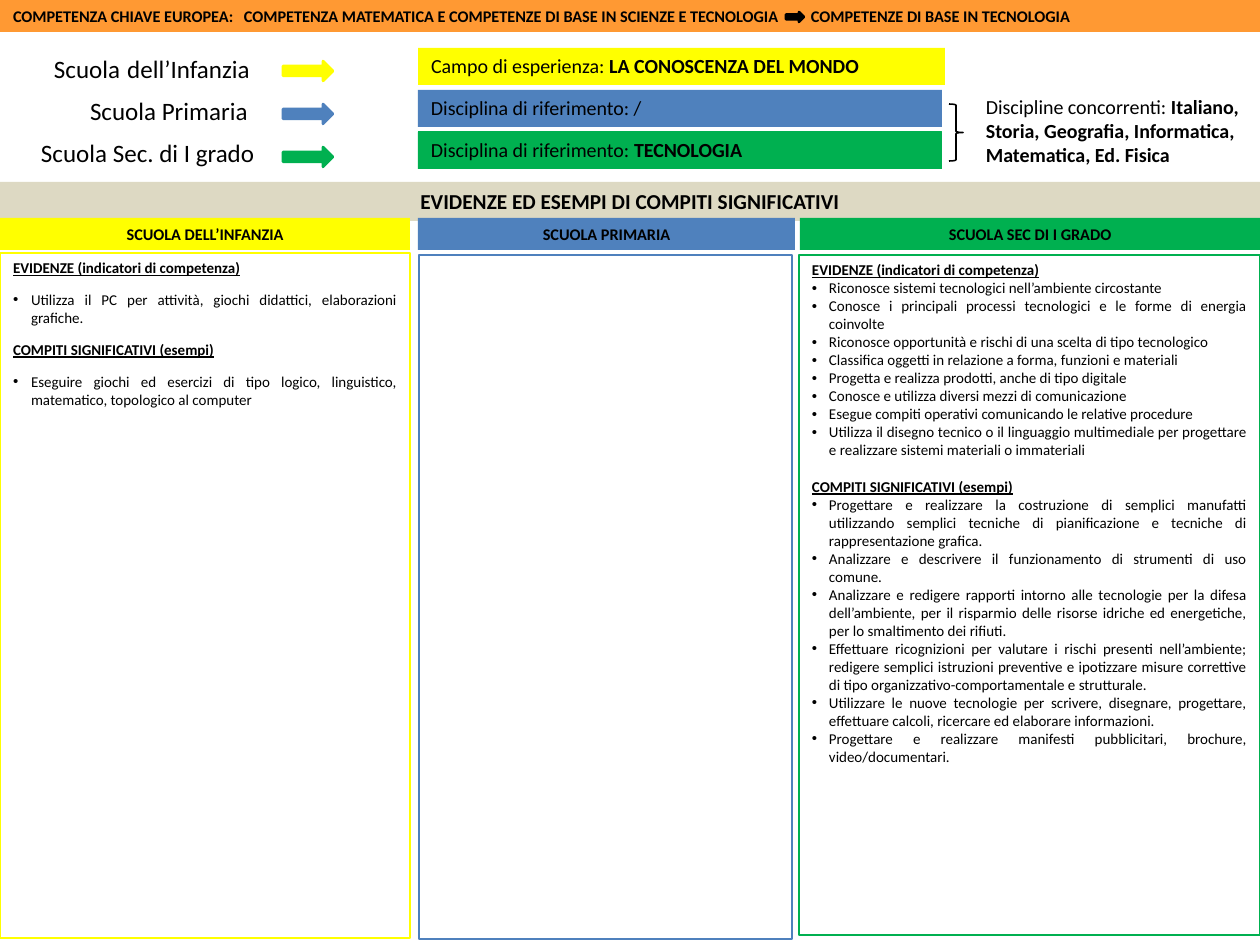
from lxml import etree
from pptx import Presentation
from pptx.dml.color import RGBColor
from pptx.enum.shapes import MSO_SHAPE
from pptx.enum.text import MSO_ANCHOR, PP_ALIGN
from pptx.oxml.ns import qn
from pptx.util import Emu, Pt

RECT, ARROW, BRACE = MSO_SHAPE.RECTANGLE, MSO_SHAPE.RIGHT_ARROW, MSO_SHAPE.RIGHT_BRACE
LEFT, CENTER, JUSTIFY = PP_ALIGN.LEFT, PP_ALIGN.CENTER, PP_ALIGN.JUSTIFY
TOP = MSO_ANCHOR.TOP
FONT = "Calibri"
PX = 914400 // 90
BLACK = RGBColor(0, 0, 0)
ORANGE = RGBColor(0xFF, 0x99, 0x33)
YELLOW = RGBColor(0xFF, 0xFF, 0x00)
BLUE = RGBColor(0x4F, 0x81, 0xBD)
GREEN = RGBColor(0x00, 0xB0, 0x50)
SAND = RGBColor(0xDD, 0xD9, 0xC3)

TITLE = ("COMPETENZA CHIAVE EUROPEA:\tCOMPETENZA MATEMATICA E COMPETENZE DI BASE "
         "IN SCIENZE E TECNOLOGIA\tCOMPETENZE DI BASE IN TECNOLOGIA")
TITLE_TABS = (231, 798)
BAND = "EVIDENZE ED ESEMPI DI COMPITI SIGNIFICATIVI"

# Runs are (text, size, bold)
SCHOOLS = [
    dict(color=YELLOW, label_box=(41, 41, 278, 50), arrow_y=61, box=(418, 48, 527, 37), outline=0,
         label=[("Scuola", 20, False), (" ", 25, False), ("dell’Infanzia", 20, False)],
         subject=[("Campo di esperienza: ", 16, False), ("LA CONOSCENZA DEL MONDO", 16, True)]),
    dict(color=BLUE, label_box=(77, 90, 192, 43), arrow_y=104, box=(418, 90, 524, 37), outline=0.75,
         label=[("Scuola Primaria", 20, False)],
         subject=[("Disciplina di riferimento: /", 16, False)]),
    dict(color=GREEN, label_box=(28, 132, 292, 43), arrow_y=147, box=(418, 132, 524, 37), outline=0.75,
         label=[("Scuola Sec. di I grado", 20, False)],
         subject=[("Disciplina di riferimento: ", 16, False), ("TECNOLOGIA", 16, True)]),
]
RELATED = [("Discipline concorrenti: ", 16, False),
           ("Italiano, Storia, Geografia, Informatica, Matematica, Ed. Fisica", 16, True)]

EVIDENCE, TASKS = "EVIDENZE (indicatori di competenza)", "COMPITI SIGNIFICATIVI (esempi)"
# gap: points before each further heading; bullet_gap: points before the first bullet below a heading
COLUMNS = [
    dict(title="SCUOLA DELL’INFANZIA", color=YELLOW, header=(0, 410), body=(0, 253, 410, 685),
         gap=11, bullet_gap=11, indent=18, sections=[
        (EVIDENCE, ["Utilizza il PC per attività, giochi didattici, elaborazioni grafiche."]),
        (TASKS, ["Eseguire giochi ed esercizi di tipo logico, linguistico, matematico, "
                 "topologico al computer"])]),
    dict(title="SCUOLA PRIMARIA", color=BLUE, header=(418, 377), body=(419, 255, 373, 684),
         gap=0, bullet_gap=0, indent=0, sections=[]),
    dict(title="SCUOLA SEC DI I GRADO", color=GREEN, header=(800, 460), body=(799, 255, 461, 680),
         gap=14.6, bullet_gap=0, indent=17, sections=[
        (EVIDENCE, [
            "Riconosce sistemi tecnologici nell’ambiente circostante",
            "Conosce i principali processi tecnologici e le forme di energia coinvolte",
            "Riconosce opportunità e rischi di una scelta di tipo tecnologico",
            "Classifica oggetti in relazione a forma, funzioni e materiali",
            "Progetta e realizza prodotti, anche di tipo digitale",
            "Conosce e utilizza diversi mezzi di comunicazione",
            "Esegue compiti operativi comunicando le relative procedure",
            "Utilizza il disegno tecnico o il linguaggio multimediale per progettare e "
            "realizzare sistemi materiali o immateriali"]),
        (TASKS, [
            "Progettare e realizzare la costruzione di semplici manufatti utilizzando semplici "
            "tecniche di pianificazione e tecniche di rappresentazione grafica.",
            "Analizzare e descrivere il funzionamento di strumenti di uso comune.",
            "Analizzare e redigere rapporti intorno alle tecnologie per la difesa dell’ambiente, "
            "per il risparmio delle risorse idriche ed energetiche, per lo smaltimento dei rifiuti.",
            "Effettuare ricognizioni per valutare i rischi presenti nell’ambiente; redigere "
            "semplici istruzioni preventive e ipotizzare misure correttive di tipo "
            "organizzativo-comportamentale e strutturale.",
            "Utilizzare le nuove tecnologie per scrivere, disegnare, progettare, effettuare "
            "calcoli, ricercare ed elaborare informazioni.",
            "Progettare e realizzare manifesti pubblicitari, brochure, video/documentari."])]),
]


def px(*values):
    return [Emu(v * PX) for v in values]


def prepare_frame(sp, inset=(13, 6)):
    tf = sp.text_frame
    tf.word_wrap = True
    tf.vertical_anchor = TOP
    tf.margin_left = tf.margin_right = Emu(inset[0] * PX)
    tf.margin_top = tf.margin_bottom = Emu(inset[1] * PX)
    return tf


def write(p, runs, align=LEFT, underline=False):
    p.alignment = align
    for text, size, bold in runs:
        r = p.add_run()
        r.text = text
        r.font.name, r.font.size, r.font.bold = FONT, Pt(size), bold
        r.font.underline = underline
        r.font.color.rgb = BLACK


def add_bullet(p, indent):
    pPr = p._p.get_or_add_pPr()
    pPr.set("marL", str(indent * PX))
    pPr.set("indent", str(-indent * PX))
    etree.SubElement(pPr, qn("a:buFont")).set("typeface", "Arial")
    etree.SubElement(pPr, qn("a:buChar")).set("char", "•")


def add_tabs(p, stops):
    tabs = etree.SubElement(p._p.get_or_add_pPr(), qn("a:tabLst"))
    for stop in stops:
        tab = etree.SubElement(tabs, qn("a:tab"))
        tab.set("pos", str(stop * PX))
        tab.set("algn", "l")


def add_box(slide, box, fill=None, line=None, width=0, runs=(), align=LEFT, kind=RECT):
    sp = slide.shapes.add_shape(kind, *px(*box))
    sp.shadow.inherit = False
    if fill is None:
        sp.fill.background()
    else:
        sp.fill.solid()
        sp.fill.fore_color.rgb = fill
    if width:
        sp.line.color.rgb = line
        sp.line.width = Pt(width)
    else:
        sp.line.fill.background()
    tf = prepare_frame(sp)
    if runs:
        write(tf.paragraphs[0], runs, align)
    return sp


def add_label(slide, box, runs, inset=(13, 6)):
    sp = slide.shapes.add_textbox(*px(*box))
    write(prepare_frame(sp, inset).paragraphs[0], runs)


def fill_sections(tf, column):
    p = tf.paragraphs[0]
    for i, (heading, items) in enumerate(column["sections"]):
        if i:
            p = tf.add_paragraph()
            p.space_before = Pt(column["gap"])
        write(p, [(heading, 12, True)], JUSTIFY, underline=True)
        for j, item in enumerate(items):
            p = tf.add_paragraph()
            p.space_before = Pt(0 if j else column["bullet_gap"])
            write(p, [(item, 12, False)], JUSTIFY)
            add_bullet(p, column["indent"])


def main():
    prs = Presentation()
    prs.slide_width, prs.slide_height = px(1260, 945)
    slide = prs.slides.add_slide(prs.slide_layouts[5])

    title = slide.shapes.title
    title.left, title.top, title.width, title.height = px(0, 0, 1260, 32)
    title.fill.solid()
    title.fill.fore_color.rgb = ORANGE
    p = prepare_frame(title).paragraphs[0]
    write(p, [(TITLE, 13, True)])
    add_tabs(p, TITLE_TABS)
    add_box(slide, (786, 12, 18, 10), BLACK, BLACK, 2, kind=ARROW)

    for school in SCHOOLS:
        color = school["color"]
        add_label(slide, school["label_box"], school["label"])
        add_box(slide, (283, school["arrow_y"], 50, 20), color, color, 2, kind=ARROW)
        add_box(slide, school["box"], color, color, school["outline"], school["subject"])
    add_box(slide, (949, 104, 14, 57), None, BLACK, 1.25, kind=BRACE)
    add_label(slide, (977, 90, 283, 82), RELATED, inset=(9, 5))

    add_box(slide, (0, 182, 1260, 39), SAND, runs=[(BAND, 17, True)], align=CENTER)
    for column in COLUMNS:
        x, w = column["header"]
        add_box(slide, (x, 218, w, 32), column["color"],
                runs=[(column["title"], 13, True)], align=CENTER)
        body = add_box(slide, column["body"], None, column["color"], 2.25)
        if column["sections"]:
            fill_sections(body.text_frame, column)

    prs.save("out.pptx")


if __name__ == "__main__":
    main()
